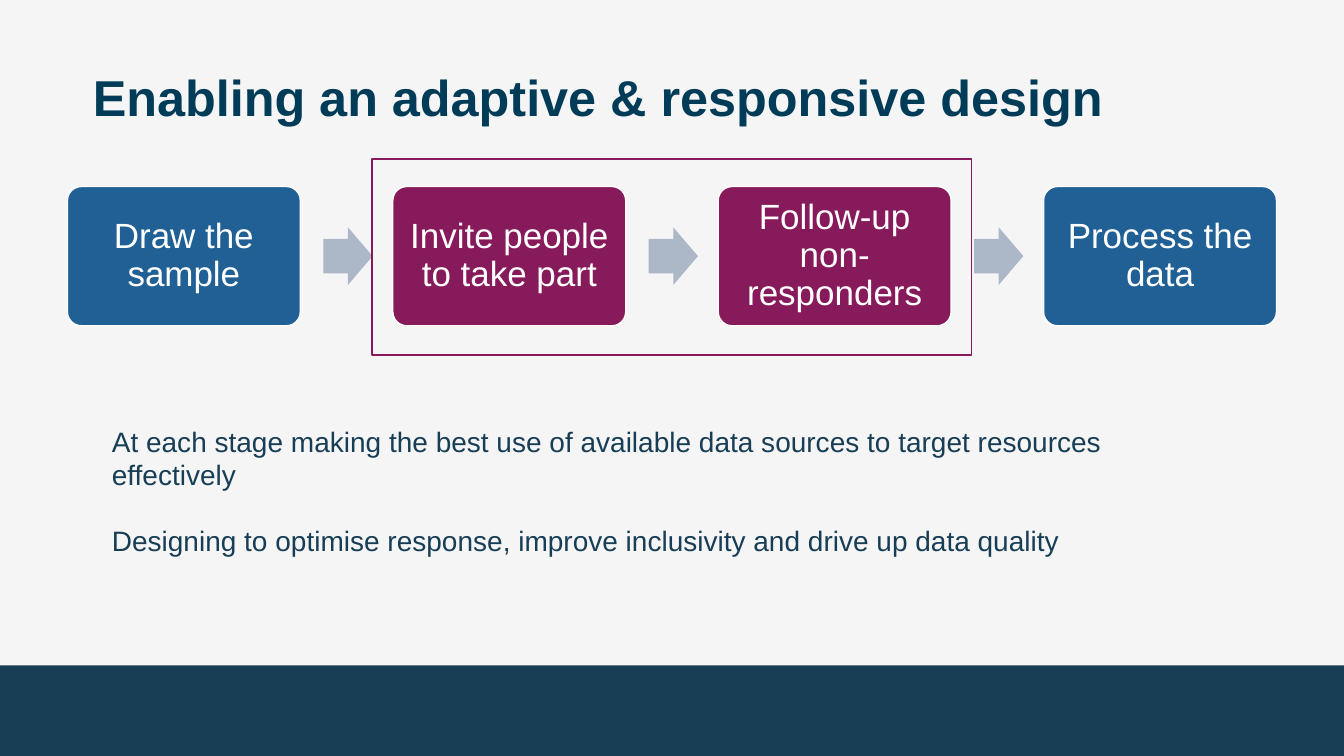
from pptx import Presentation
from pptx.dml.color import RGBColor
from pptx.enum.shapes import MSO_SHAPE
from pptx.enum.text import MSO_ANCHOR, PP_ALIGN
from pptx.util import Cm, Pt

RECTANGLE = MSO_SHAPE.RECTANGLE
ROUNDED = MSO_SHAPE.ROUNDED_RECTANGLE
ARROW = MSO_SHAPE.RIGHT_ARROW
TOP, MIDDLE, BOTTOM = MSO_ANCHOR.TOP, MSO_ANCHOR.MIDDLE, MSO_ANCHOR.BOTTOM
LEFT, CENTER = PP_ALIGN.LEFT, PP_ALIGN.CENTER

FONT = "Arial"
COLORS = {
    "background": "F5F5F6",
    "navy": "183E56",
    "title": "003C57",
    "blue": "206095",
    "plum": "871A5B",
    "arrow": "ACB7C8",
    "white": "FFFFFF",
}


def add_block(kind, left, top, width, height, fill=None, line=None):
    """Add a flat shape; without a fill or line colour that part is left empty."""
    block = page.shapes.add_shape(kind, Cm(left), Cm(top), Cm(width), Cm(height))
    block.shadow.inherit = False
    if fill:
        block.fill.solid()
        block.fill.fore_color.rgb = RGBColor.from_string(COLORS[fill])
    else:
        block.fill.background()
    if line:
        block.line.color.rgb = RGBColor.from_string(COLORS[line])
        block.line.width = Pt(1)
    else:
        block.line.fill.background()
    return block


def write(box, lines, size, color, margins, anchor, align=LEFT,
          bold=False, spacing=1.0, gap=0):
    """Fill a box with paragraphs; margins are (left, top, right, bottom) in cm."""
    frame = box.text_frame
    frame.word_wrap = True
    frame.vertical_anchor = anchor
    (frame.margin_left, frame.margin_top,
     frame.margin_right, frame.margin_bottom) = [Cm(m) for m in margins]
    for index, line in enumerate(lines):
        para = frame.add_paragraph() if index else frame.paragraphs[0]
        para.alignment = align
        para.line_spacing = spacing
        if index:
            para.space_before = Pt(gap)
        span = para.add_run()
        span.text = line
        span.font.name = FONT
        span.font.size = Pt(size)
        span.font.bold = bold
        span.font.color.rgb = RGBColor.from_string(COLORS[color])


deck = Presentation()
deck.slide_width = Cm(33.87)
deck.slide_height = Cm(19.05)
page = deck.slides.add_slide(deck.slide_layouts[6])
page.background.fill.solid()
page.background.fill.fore_color.rgb = RGBColor.from_string(COLORS["background"])

# Footer band and title
add_block(RECTANGLE, 0, 16.77, 33.87, 2.28, fill="navy")
title = page.shapes.add_textbox(Cm(2.34), Cm(1.78), Cm(29.21), Cm(1.47))
write(title, ["Enabling an adaptive & responsive design"], 36, "title",
      (0, 0, 0, 0), TOP, bold=True, spacing=0.95)

# Process steps, with an arrow after each one but the last
steps = [
    ("Draw the sample", "blue"),
    ("Invite people to take part", "plum"),
    ("Follow-up non-responders", "plum"),
    ("Process the data", "blue"),
]
STEP_LEFT, STEP_PITCH, ARROW_OFFSET = 1.7, 8.2, 6.45
for number, (label, color) in enumerate(steps):
    left = STEP_LEFT + number * STEP_PITCH
    step = add_block(ROUNDED, left, 4.7, 5.87, 3.51, fill=color, line="white")
    step.adjustments[0] = 0.1
    write(step, [label], 25, "white", (0.25, 0.36, 0.25, 0.36), MIDDLE,
          align=CENTER, spacing=0.9)
    if number < len(steps) - 1:
        arrow = add_block(ARROW, left + ARROW_OFFSET, 5.73, 1.24, 1.45, fill="arrow")
        arrow.adjustments[0] = 0.6
        arrow.adjustments[1] = 0.5

# Explanation below the steps
notes = page.shapes.add_textbox(Cm(2.82), Cm(10.49), Cm(26.9), Cm(3.68))
write(notes, [
    "At each stage making the best use of available data sources to target resources effectively",
    "Designing to optimise response, improve inclusivity and drive up data quality",
], 20, "navy", (0, 0.13, 0.25, 0.13), BOTTOM, gap=23)

# Frame around the two middle steps
add_block(RECTANGLE, 9.38, 4.01, 15.1, 4.94, line="plum")

deck.save("out.pptx")
